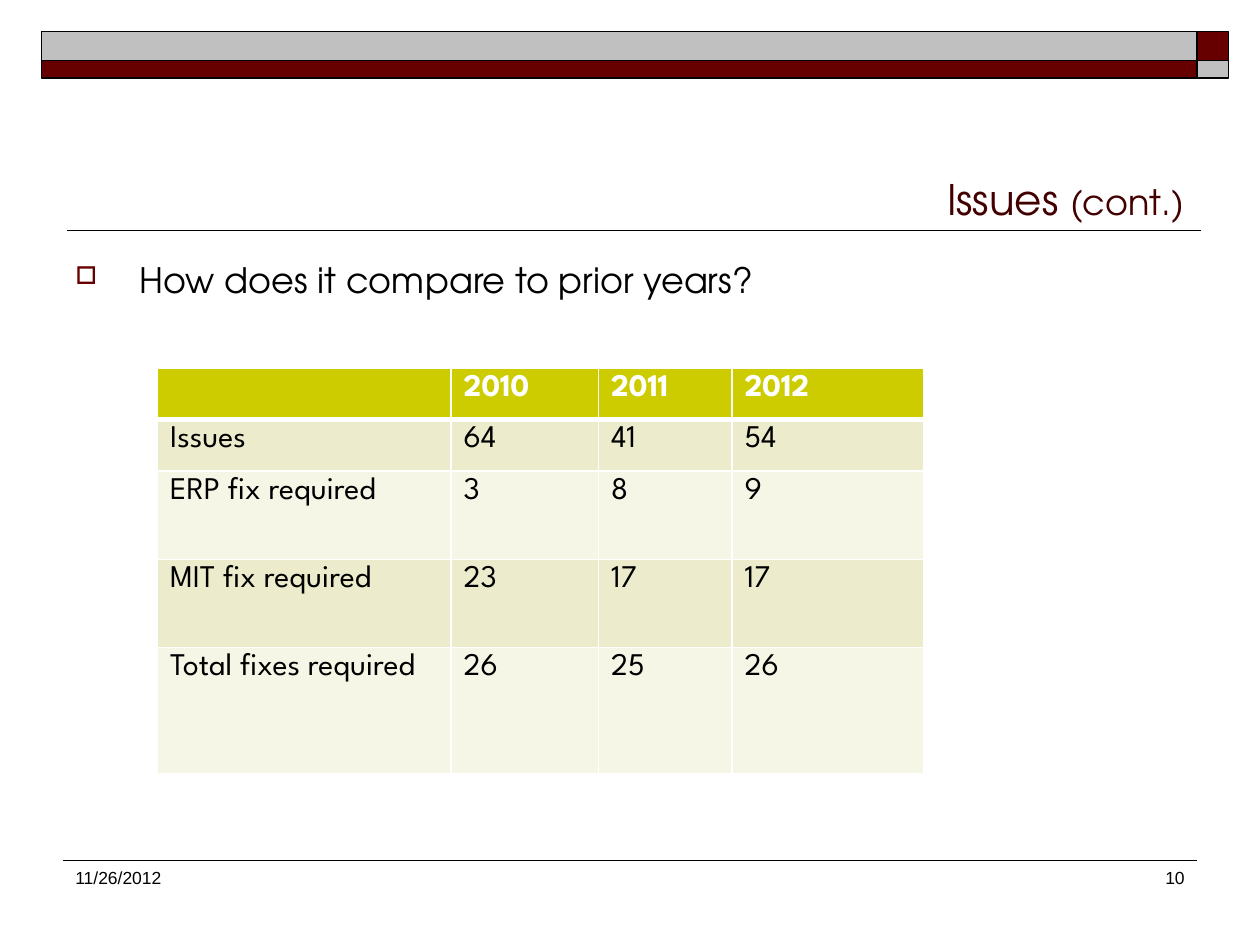
from lxml.etree import SubElement
from pptx import Presentation
from pptx.dml.color import RGBColor
from pptx.enum.shapes import MSO_CONNECTOR, MSO_SHAPE
from pptx.enum.text import MSO_ANCHOR, PP_ALIGN
from pptx.oxml.ns import qn
from pptx.util import Inches, Pt

HEADING_FONT = "TeX Gyre Adventor"
TABLE_FONT = "League Spartan"
MAROON, SILVER, BLACK, WHITE = "660000", "C0C0C0", "000000", "FFFFFF"

BAND_COLUMNS = [(0.33, 9.17), (9.5, 0.25)]
BAND_ROWS = [(0.25, 0.23), (0.48, 0.14)]
BAND_FILLS = [[SILVER, MAROON], [MAROON, SILVER]]

RULES = [(0.53, 9.53, 1.83, 1), (0.5, 9.5, 6.83, 0.75)]

TITLE = [("Issues ", 24), ("(cont.)", 20)]
QUESTION = [("How does it compare to prior years?", 20)]
DATE = [("11/26/2012", 10)]
PAGE_NUMBER = [("10", 10)]

TABLE_ROWS = [
    ["", "2010", "2011", "2012"],
    ["Issues", "64", "41", "54"],
    ["ERP fix required", "3", "8", "9"],
    ["MIT fix required", "23", "17", "17"],
    ["Total fixes required", "26", "25", "26"],
]
COLUMN_WIDTHS = [2.33, 1.17, 1.06, 1.52]
ROW_HEIGHTS = [0.41, 0.41, 0.7, 0.7, 1]
HEADER_FILL = "CCCC00"
STRIPE_FILLS = ["F6F6E7", "ECECCC"]


def color(value):
    return RGBColor.from_string(value)


def style_font(font, name, size, value, bold=False):
    font.name = name
    font.size = Pt(size)
    font.bold = bold
    font.color.rgb = color(value)


def add_text(slide, box, pieces, font_name, value, align=PP_ALIGN.LEFT, anchor=MSO_ANCHOR.TOP):
    shape = slide.shapes.add_textbox(*map(Inches, box))
    frame = shape.text_frame
    frame.word_wrap = True
    frame.vertical_anchor = anchor
    paragraph = frame.paragraphs[0]
    paragraph.alignment = align
    for text, size in pieces:
        run = paragraph.add_run()
        run.text = text
        style_font(run.font, font_name, size, value)
    return paragraph


def add_bullet(paragraph, character, value, percent, indent):
    properties = paragraph._p.get_or_add_pPr()
    properties.set("marL", str(Inches(indent)))
    properties.set("indent", str(-Inches(indent)))
    bullet_color = SubElement(properties, qn("a:buClr"))
    SubElement(bullet_color, qn("a:srgbClr"), val=value)
    SubElement(properties, qn("a:buSzPct"), val=str(percent * 1000))
    SubElement(properties, qn("a:buChar"), char=character)


def add_band(slide):
    for (top, height), fills in zip(BAND_ROWS, BAND_FILLS):
        for (left, width), fill in zip(BAND_COLUMNS, fills):
            box = map(Inches, (left, top, width, height))
            shape = slide.shapes.add_shape(MSO_SHAPE.RECTANGLE, *box)
            shape.shadow.inherit = False
            shape.fill.solid()
            shape.fill.fore_color.rgb = color(fill)
            shape.line.color.rgb = color(BLACK)
            shape.line.width = Pt(1)


def add_rule(slide, left, right, top, width):
    rule = slide.shapes.add_connector(
        MSO_CONNECTOR.STRAIGHT, Inches(left), Inches(top), Inches(right), Inches(top))
    rule.line.color.rgb = color(BLACK)
    rule.line.width = Pt(width)
    SubElement(rule._element.spPr, qn("a:effectLst"))


def set_borders(cell, widths):
    properties = cell._tc.get_or_add_tcPr()
    for position, (side, width) in enumerate(widths.items()):
        border = properties.makeelement(qn(f"a:ln{side}"), {"w": str(Pt(width))})
        fill = SubElement(border, qn("a:solidFill"))
        SubElement(fill, qn("a:srgbClr"), val=WHITE)
        properties.insert(position, border)


def add_issue_table(slide):
    table = slide.shapes.add_table(
        len(TABLE_ROWS), len(COLUMN_WIDTHS), Inches(1.25), Inches(2.92),
        Inches(sum(COLUMN_WIDTHS)), Inches(sum(ROW_HEIGHTS))).table
    for column, width in zip(table.columns, COLUMN_WIDTHS):
        column.width = Inches(width)
    for row_index, (values, height) in enumerate(zip(TABLE_ROWS, ROW_HEIGHTS)):
        table.rows[row_index].height = Inches(height)
        header = row_index == 0
        for column_index, text in enumerate(values):
            cell = table.cell(row_index, column_index)
            cell.fill.solid()
            cell.fill.fore_color.rgb = color(HEADER_FILL if header else STRIPE_FILLS[row_index % 2])
            cell.text_frame.text = text
            for run in cell.text_frame.paragraphs[0].runs:
                style_font(run.font, TABLE_FONT, 18, WHITE if header else BLACK, header)
            set_borders(cell, {"L": 1, "R": 1, "T": 3 if row_index == 1 else 1, "B": 3 if header else 1})


def main():
    presentation = Presentation()
    presentation.slide_width = Inches(10)
    presentation.slide_height = Inches(7.5)
    slide = presentation.slides.add_slide(presentation.slide_layouts[6])
    add_band(slide)
    for rule in RULES:
        add_rule(slide, *rule)
    add_text(slide, (0.5, 0.58, 9, 1.25), TITLE, HEADING_FONT, "420000",
             PP_ALIGN.RIGHT, MSO_ANCHOR.BOTTOM)
    question = add_text(slide, (0.5, 2, 9, 4.7), QUESTION, HEADING_FONT, BLACK)
    add_bullet(question, "□", MAROON, 70, 0.51)
    add_text(slide, (0.5, 6.83, 1.83, 0.5), DATE, "Arial", BLACK)
    add_text(slide, (7.42, 6.83, 2.08, 0.5), PAGE_NUMBER, "Arial", BLACK, PP_ALIGN.RIGHT)
    add_issue_table(slide)
    presentation.save("out.pptx")


if __name__ == "__main__":
    main()
